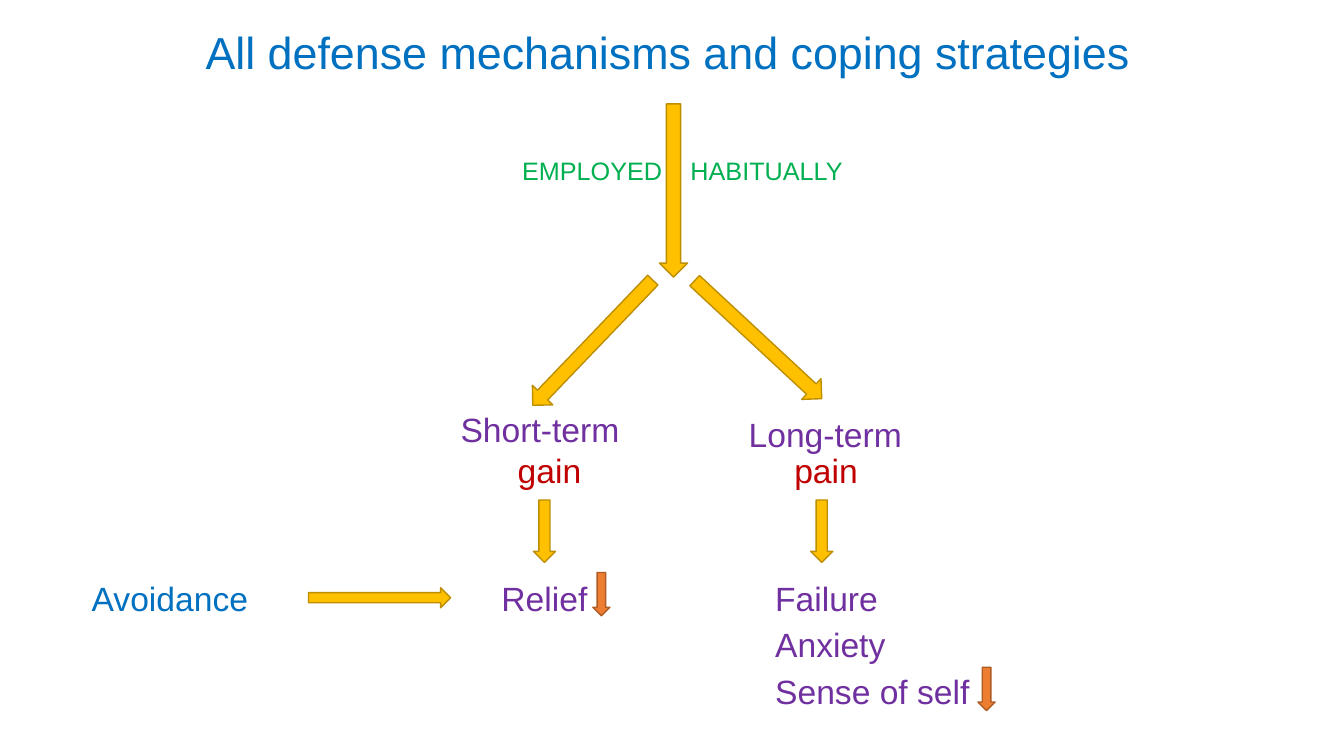
import dataclasses

import pptx
import pptx.dml.color
import pptx.enum.shapes
import pptx.enum.text
import pptx.util

Inches = pptx.util.Inches
Pt = pptx.util.Pt
Align = pptx.enum.text.PP_ALIGN
Preset = pptx.enum.shapes.MSO_SHAPE


@dataclasses.dataclass(frozen=True)
class Theme:
    font: str = "Arial"
    title_size: int = 32
    body_size: int = 24
    note_size: int = 18
    blue: str = "0070C0"
    green: str = "00B050"
    purple: str = "7030A0"
    red: str = "C00000"
    flow: tuple = ("FFC000", "BD8E00")
    decrease: tuple = ("ED7D31", "AF5C24")


THEME = Theme()


def rgb(value):
    return pptx.dml.color.RGBColor.from_string(value)


def add_text(slide, text, left, top, width, height=0.5, *,
             size=THEME.body_size, color=THEME.purple, align=Align.LEFT):
    label = slide.shapes.add_textbox(Inches(left), Inches(top), Inches(width), Inches(height))
    frame = label.text_frame
    frame.word_wrap = True
    paragraph = frame.paragraphs[0]
    paragraph.alignment = align
    run = paragraph.add_run()
    run.text = text
    run.font.name = THEME.font
    run.font.size = Pt(size)
    run.font.color.rgb = rgb(color)


def add_arrow(slide, left, top, width, height, *,
              preset=Preset.DOWN_ARROW, colors=THEME.flow, rotation=0):
    arrow = slide.shapes.add_shape(preset, Inches(left), Inches(top), Inches(width), Inches(height))
    arrow.rotation = rotation
    arrow.shadow.inherit = False
    fill, outline = colors
    arrow.fill.solid()
    arrow.fill.fore_color.rgb = rgb(fill)
    arrow.line.color.rgb = rgb(outline)
    arrow.line.width = Pt(1)


def add_heading(slide):
    add_text(slide, "All defense mechanisms and coping strategies", 1.94, 0.2, 9.49, 0.64,
             size=THEME.title_size, color=THEME.blue)
    for word, left in (("EMPLOYED", 5.08), ("HABITUALLY", 6.75)):
        add_text(slide, word, left, 1.49, 1.75, 0.4, size=THEME.note_size, color=THEME.green)


def add_branches(slide):
    for left, top, rotation in ((6.54, 1.03, 0), (5.74, 2.54, 43.8), (7.38, 2.51, 312.9)):
        add_arrow(slide, left, top, 0.28, 1.72, rotation=rotation)
    add_text(slide, "Short-term", 4.47, 4.01, 1.83)
    add_text(slide, "Long-term", 7.2, 4.06, 1.97, align=Align.CENTER)
    add_text(slide, "gain", 4.95, 4.41, 1, color=THEME.red, align=Align.CENTER)
    add_text(slide, "pain", 7.78, 4.41, 0.94, color=THEME.red)
    for left in (5.29, 8.04):
        add_arrow(slide, left, 4.96, 0.22, 0.62)


def add_outcomes(slide):
    add_text(slide, "Avoidance", 0.66, 5.68, 2.05, color=THEME.blue, align=Align.CENTER)
    add_arrow(slide, 3.06, 5.83, 1.41, 0.2, preset=Preset.RIGHT_ARROW)
    add_text(slide, "Relief", 4.42, 5.68, 1.96, align=Align.CENTER)
    for row, outcome in enumerate(("Failure", "Anxiety", "Sense of self")):
        add_text(slide, outcome, 7.59, 5.68 + row * 0.465, 2.2)
    for left, top in ((5.88, 5.68), (9.7, 6.62)):
        add_arrow(slide, left, top, 0.17, 0.43, colors=THEME.decrease)


def main():
    deck = pptx.Presentation()
    deck.slide_width = Inches(13.33)
    deck.slide_height = Inches(7.5)
    slide = deck.slides.add_slide(deck.slide_layouts[6])
    add_heading(slide)
    add_branches(slide)
    add_outcomes(slide)
    deck.save("out.pptx")


if __name__ == "__main__":
    main()
